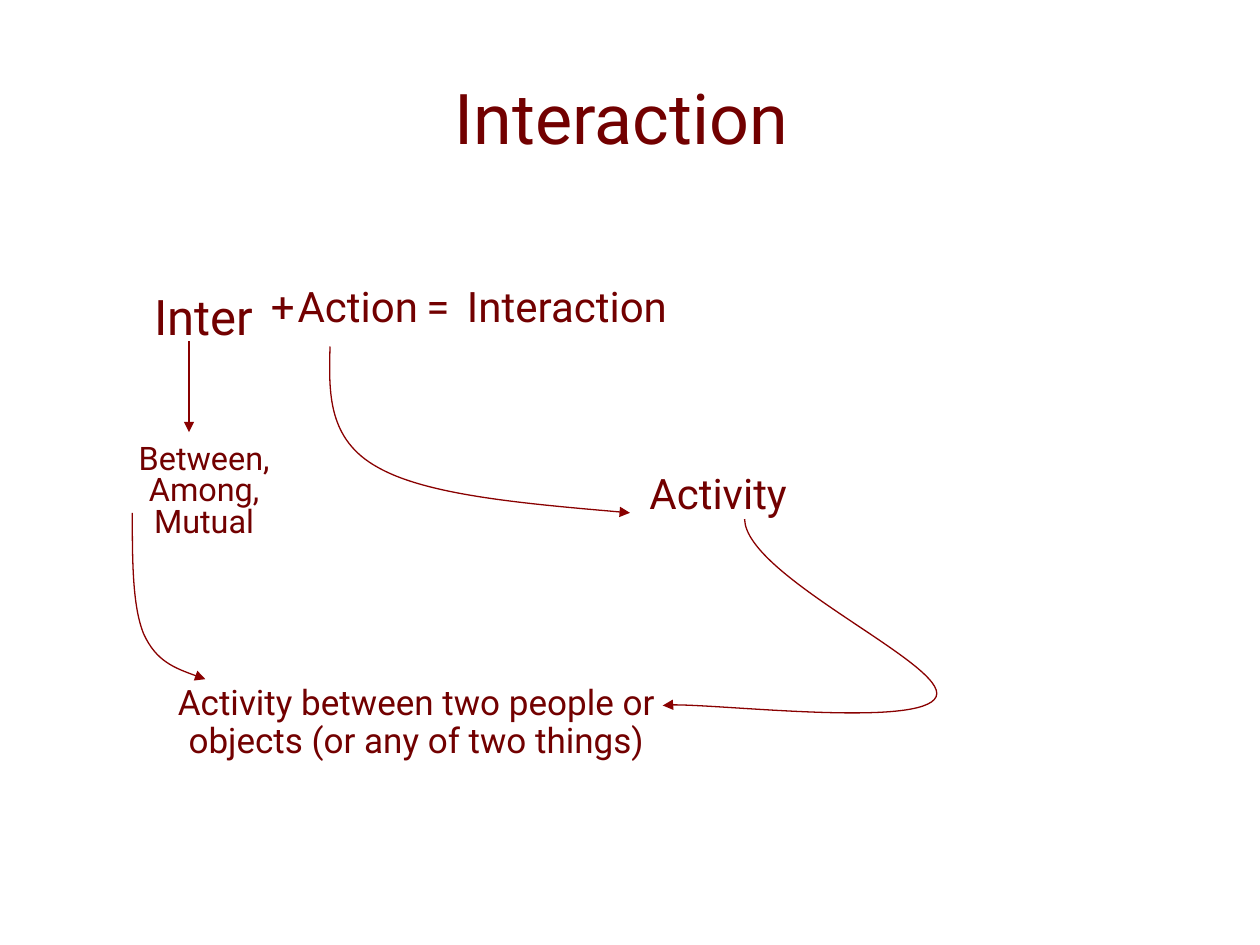
import dataclasses

import lxml.etree
import pptx
import pptx.dml.color
import pptx.enum.shapes
import pptx.enum.text
import pptx.oxml.ns
import pptx.util


@dataclasses.dataclass(frozen=True)
class Theme:
    """Fonts, type sizes and colours of the slide."""

    font: str = "Roboto"
    background: str = "FFFFFF"
    text: str = "720000"
    line: str = "890000"
    line_width: float = 0.75
    title_size: float = 40
    lead_size: float = 28
    term_size: float = 24
    summary_size: float = 20
    meaning_size: float = 18.5


class SlideBuilder:
    """Places themed elements on a grid of 100 columns by 75 rows."""

    COLUMNS, ROWS = 100, 75

    def __init__(self, presentation, theme):
        """Add a title and content slide with a plain background."""
        self.theme = theme
        self.cell_width = presentation.slide_width / self.COLUMNS
        self.cell_height = presentation.slide_height / self.ROWS
        self.slide = presentation.slides.add_slide(presentation.slide_layouts[1])
        fill = self.slide.background.fill
        fill.solid()
        fill.fore_color.rgb = self.color(theme.background)

    def color(self, value):
        """Return an RGB colour."""
        return pptx.dml.color.RGBColor.from_string(value)

    def point(self, column, row):
        """Return a grid position as slide lengths."""
        return round(column * self.cell_width), round(row * self.cell_height)

    def set_text(self, shape, text, size, spacing=1.0):
        """Fill a shape with one centred paragraph."""
        frame = shape.text_frame
        frame.word_wrap = True
        frame.auto_size = pptx.enum.text.MSO_AUTO_SIZE.NONE
        frame.text = text
        paragraph = frame.paragraphs[0]
        paragraph.alignment = pptx.enum.text.PP_ALIGN.CENTER
        paragraph.line_spacing = spacing
        paragraph.font.name = self.theme.font
        paragraph.font.size = pptx.util.Pt(size)
        paragraph.font.color.rgb = self.color(self.theme.text)
        return paragraph

    def placeholder(self, index, box, text, size):
        """Move and fill a template placeholder without a bullet."""
        shape = self.slide.placeholders[index]
        shape.left, shape.top = self.point(*box[:2])
        shape.width, shape.height = self.point(*box[2:])
        properties = self.set_text(shape, text, size)._p.get_or_add_pPr()
        properties.set("marL", "0")
        properties.set("indent", "0")
        bullet = properties.makeelement(pptx.oxml.ns.qn("a:buNone"))
        properties.find(pptx.oxml.ns.qn("a:defRPr")).addprevious(bullet)

    def label(self, box, text, size, spacing=0.9):
        """Add a text box."""
        shape = self.slide.shapes.add_textbox(*self.point(*box[:2]), *self.point(*box[2:]))
        self.set_text(shape, text, size, spacing)

    def style_arrow(self, shape):
        """Give a line its colour, width and arrowhead."""
        shape.line.color.rgb = self.color(self.theme.line)
        shape.line.width = pptx.util.Pt(self.theme.line_width)
        line = shape._element.spPr.find(pptx.oxml.ns.qn("a:ln"))
        head = lxml.etree.SubElement(line, pptx.oxml.ns.qn("a:tailEnd"))
        head.set("type", "triangle")

    def straight_arrow(self, start, end):
        """Add a straight arrow."""
        connector = self.slide.shapes.add_connector(
            pptx.enum.shapes.MSO_CONNECTOR.STRAIGHT, *self.point(*start), *self.point(*end))
        self.style_arrow(connector)
        lxml.etree.SubElement(connector._element.spPr, pptx.oxml.ns.qn("a:effectLst"))

    def curved_arrow(self, start, *points):
        """Add an arrow of cubic curves, three points to a curve."""
        builder = self.slide.shapes.build_freeform(*self.point(*start))
        builder.add_line_segments([self.point(*point) for point in points], close=False)
        shape = builder.convert_to_shape()
        shape.shadow.inherit = False
        shape.fill.background()
        self.style_arrow(shape)
        qn = pptx.oxml.ns.qn
        outline = next(shape._element.iter(qn("a:path")))
        segments = outline.findall(qn("a:lnTo"))
        for first in range(0, len(segments), 3):
            curve = lxml.etree.SubElement(outline, qn("a:cubicBezTo"))
            for segment in segments[first:first + 3]:
                curve.append(segment[0])
                outline.remove(segment)


def main():
    """Build and save the slide."""
    presentation = pptx.Presentation()
    presentation.slide_width = pptx.util.Inches(10)
    presentation.slide_height = pptx.util.Inches(7.5)
    theme = Theme()
    builder = SlideBuilder(presentation, theme)
    term_width, term_height, equation_row = 18.6, 9, 22.2
    sign_width, sign_height = 5.9, 4.9

    builder.placeholder(0, (5, 3, 90, 12.5), "Interaction ", theme.title_size)
    builder.placeholder(1, (6.9, equation_row, term_width, term_height), "Inter", theme.lead_size)
    for column, row, text in (
        (19.1, equation_row, "Action"),
        (35.7, equation_row, "Interaction "),
        (47.7, 37.1, "Activity"),
    ):
        builder.label((column, row, term_width, term_height), text, theme.term_size)
    for column, sign in ((19.5, "+"), (31.8, "=")):
        builder.label((column, equation_row, sign_width, sign_height), sign, theme.term_size)
    builder.label((6.9, 34.9, term_width, term_height), "Between, Among, Mutual",
                  theme.meaning_size, 0.8)
    builder.label((9.8, 53.9, 46.5, term_height),
                  "Activity between two people or objects (or any of two things)",
                  theme.summary_size)

    builder.straight_arrow((15, 27.1), (15, 34.3))
    builder.curved_arrow((26.2, 27.5), (26.1, 31.2), (26, 34.9), (30, 37.1),
                         (33.9, 39.3), (41.9, 40), (50, 40.7))
    builder.curved_arrow((59.1, 41.2), (59.2, 45.8), (75.4, 52.8), (74.3, 55.3),
                         (73.2, 57.8), (54.9, 55.6), (52.6, 56))
    builder.curved_arrow((10.5, 40.7), (10.5, 44.4), (10.5, 48.1), (11.4, 50.3),
                         (12.4, 52.5), (14.3, 53.2), (16.3, 53.9))
    presentation.save("out.pptx")


if __name__ == "__main__":
    main()
